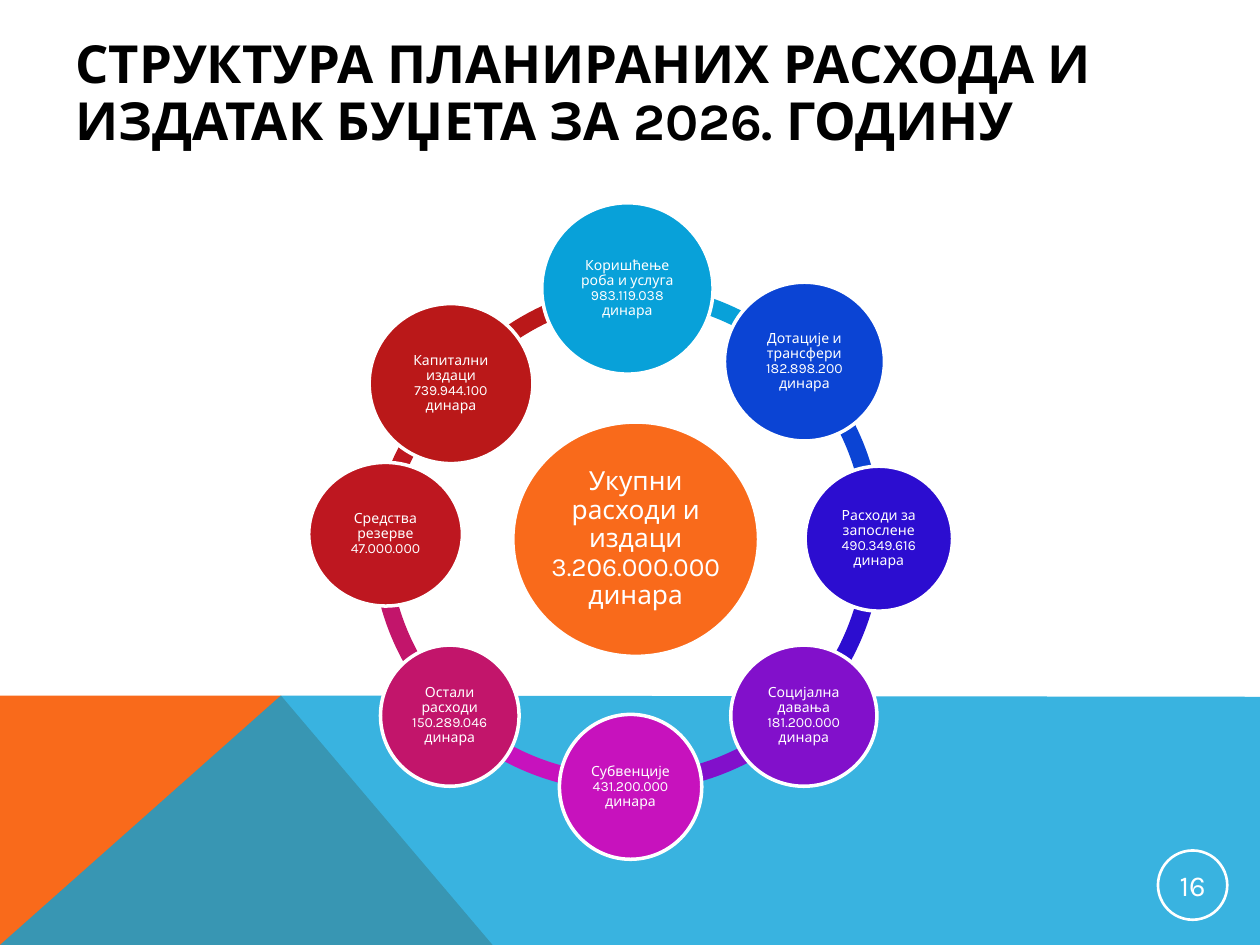
import pptx
import pptx.dml.color
import pptx.enum.shapes
import pptx.enum.text
import pptx.oxml
import pptx.oxml.ns
import pptx.util

Inches = pptx.util.Inches
Pt = pptx.util.Pt
MSO_SHAPE = pptx.enum.shapes.MSO_SHAPE

COLORS = {
    "orange": "F96A1B", "sky": "08A1D9", "blue": "0B44D4", "indigo": "2C0DD0",
    "violet": "8210CB", "magenta": "C712BD", "pink": "C2156B", "red": "BE1720",
    "brick": "BA1819", "white": "FFFFFF", "black": "000000",
}


def paint(shape, fill=None, line_width=None):
    shape.shadow.inherit = False
    if fill:
        shape.fill.solid()
        shape.fill.fore_color.rgb = pptx.dml.color.RGBColor.from_string(COLORS[fill])
    else:
        shape.fill.background()
    if line_width:
        shape.line.color.rgb = pptx.dml.color.RGBColor.from_string(COLORS["white"])
        shape.line.width = Pt(line_width)
    else:
        shape.line.fill.background()


def write(shape, text, size, color="white", inset=0.01, spacing=0.9, centered=True, bold=False):
    frame = shape.text_frame
    frame.word_wrap = True
    frame.vertical_anchor = pptx.enum.text.MSO_ANCHOR.MIDDLE
    frame.margin_left = frame.margin_right = Inches(inset)
    frame.margin_top = frame.margin_bottom = Inches(min(inset, 0.05))
    frame.text = text
    paragraph = frame.paragraphs[0]
    align = pptx.enum.text.PP_ALIGN
    paragraph.alignment = align.CENTER if centered else align.LEFT
    paragraph.line_spacing = spacing
    font = paragraph.runs[0].font
    font.name = "Karla"
    font.size = Pt(size)
    font.bold = bold
    font.color.rgb = pptx.dml.color.RGBColor.from_string(COLORS[color])


prs = pptx.Presentation()
prs.slide_width = Inches(10)
prs.slide_height = Inches(7.5)
slide = prs.slides.add_slide(prs.slide_layouts[6])
shapes = slide.shapes

bands = [
    ("orange", [(0, 7.5), (0, 5.52), (2.23, 5.52), (3.91, 7.5)], None),
    ("sky", [(0, 7.5), (2.23, 5.52), (10, 5.53), (10, 7.5)], 80),
]
for fill, corners, opacity in bands:
    points = [(Inches(x), Inches(y)) for x, y in corners]
    builder = shapes.build_freeform(*points[0])
    builder.add_line_segments(points[1:], close=True)
    band = builder.convert_to_shape()
    paint(band, fill)
    if opacity:
        alpha = pptx.oxml.parse_xml(
            f'<a:alpha {pptx.oxml.ns.nsdecls("a")} val="{opacity * 1000}"/>')
        band.fill._xPr.find(".//" + pptx.oxml.ns.qn("a:srgbClr")).append(alpha)

title = shapes.add_textbox(Inches(0.5), Inches(0.29), Inches(9), Inches(0.93))
write(title, "СТРУКТУРА ПЛАНИРАНИХ РАСХОДА И ИЗДАТАК БУЏЕТА ЗА 2026. ГОДИНУ",
      30, "black", inset=0.1, centered=False, bold=True)

page_number = shapes.add_shape(MSO_SHAPE.OVAL, Inches(9.19), Inches(6.75), Inches(0.55), Inches(0.55))
paint(page_number, line_width=1.5)
write(page_number, "16", 16.5, spacing=1)

ring_arcs = [
    ("brick", 3.13, 2.24, 130.7, 158.93),
    ("red", 2.94, 2.45, 111.49, 135.56),
    ("pink", 2.95, 2.25, 81, 108),
    ("magenta", 2.93, 2.23, 53.1, 80.46),
    ("violet", 2.98, 2.23, 27.56, 53.88),
    ("indigo", 2.95, 2.25, 0, 27),
    ("blue", 2.95, 2.25, 189, 0),
    ("sky", 2.95, 2.25, 162, 189),
]
for fill, left, top, start, end in ring_arcs:
    arc = shapes.add_shape(MSO_SHAPE.BLOCK_ARC, Inches(left), Inches(top), Inches(4.05), Inches(4.05))
    for index, value in enumerate((start, end, 0.034)):
        arc.adjustments[index] = value
    paint(arc, fill)

budget_items = [
    ("orange", 4.07, 3.35, 1.95, 1.86, 15, "Укупни расходи и издаци 3.206.000.000 динара"),
    ("sky", 4.3, 1.61, 1.36, 1.36, 8, "Коришћење роба и услуга 983.119.038 динара"),
    ("blue", 5.75, 2.24, 1.27, 1.26, 8, "Дотације и трансфери 182.898.200 динара"),
    ("indigo", 6.39, 3.7, 1.17, 1.15, 8, "Расходи за запослене 490.349.616 динара"),
    ("violet", 5.8, 5.12, 1.16, 1.12, 8, "Социјална давања 181.200.000 динара"),
    ("magenta", 4.44, 5.67, 1.13, 1.15, 8, "Субвенције 431.200.000 динара"),
    ("pink", 3.02, 5.12, 1.1, 1.12, 8, "Остали расходи 150.289.046 динара"),
    ("red", 2.45, 3.67, 1.22, 1.14, 8, "Средства резерве 47.000.000"),
    ("brick", 2.93, 2.41, 1.3, 1.27, 8, "Капитални издаци 739.944.100 динара"),
]
for fill, left, top, width, height, size, text in budget_items:
    item = shapes.add_shape(MSO_SHAPE.OVAL, Inches(left), Inches(top), Inches(width), Inches(height))
    paint(item, fill, 2)
    write(item, text, size)

prs.save("out.pptx")
